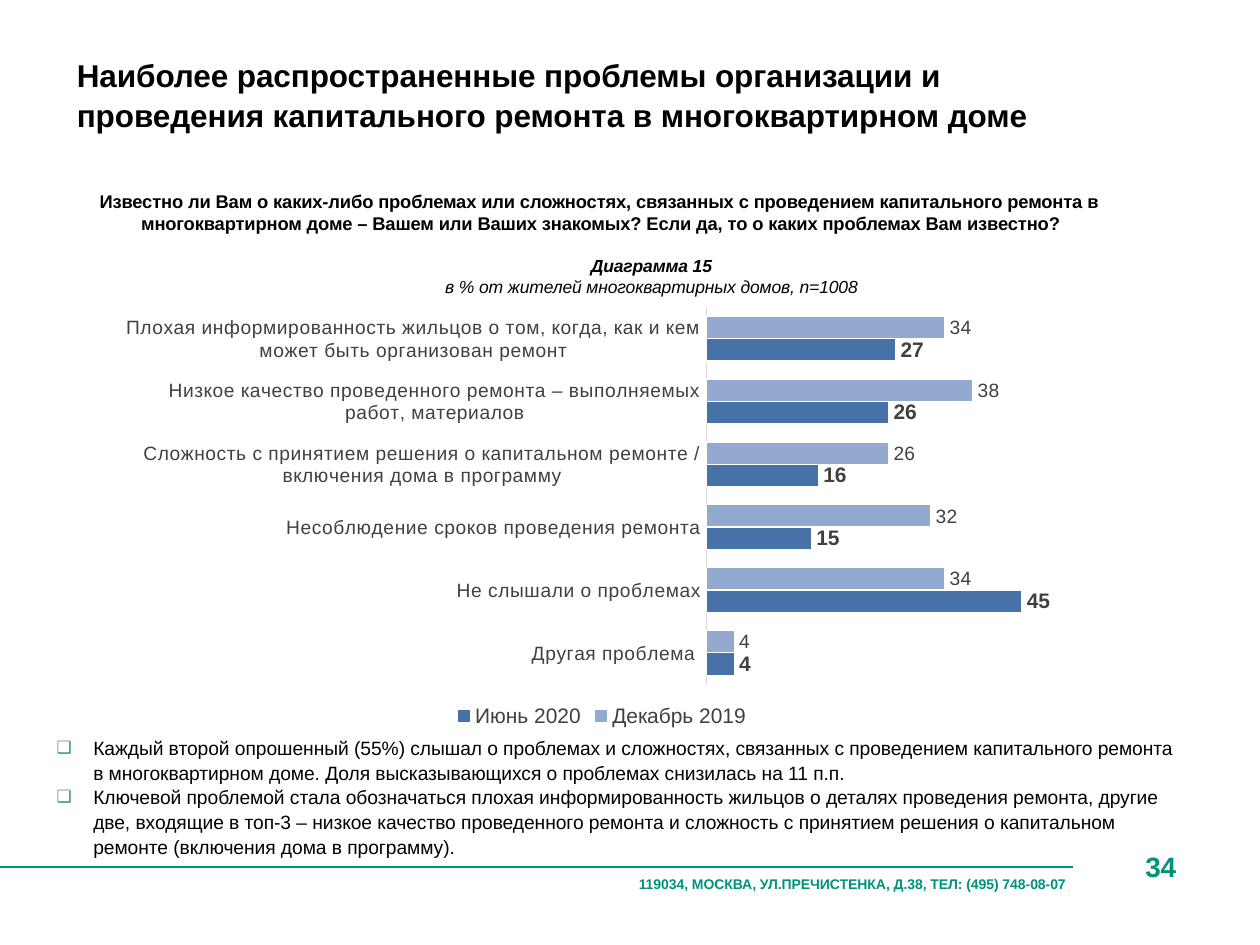
from lxml import etree
from pptx import Presentation
from pptx.chart.data import CategoryChartData
from pptx.dml.color import RGBColor
from pptx.enum.chart import (XL_CHART_TYPE, XL_LABEL_POSITION as LabelPos,
                             XL_LEGEND_POSITION as LegendPos, XL_TICK_MARK as Tick)
from pptx.enum.shapes import MSO_CONNECTOR
from pptx.enum.text import MSO_ANCHOR, MSO_AUTO_SIZE, PP_ALIGN
from pptx.oxml import parse_xml
from pptx.oxml.ns import nsdecls, qn
from pptx.util import Inches, Pt

BLACK = RGBColor(0x00, 0x00, 0x00)
GREY = RGBColor(0x40, 0x40, 0x40)
AXIS_GREY = RGBColor(0xD9, 0xD9, 0xD9)
WHITE = RGBColor(0xFF, 0xFF, 0xFF)
GREEN = RGBColor(0x00, 0x92, 0x7A)
RULE_GREEN = RGBColor(0x00, 0x90, 0x7C)
LIGHT_BLUE = RGBColor(0x93, 0xA9, 0xCF)
BLUE = RGBColor(0x46, 0x72, 0xA8)

TITLE = ("Наиболее распространенные проблемы организации и проведения "
         "капитального ремонта в многоквартирном доме")
QUESTION = ("Известно ли Вам о каких-либо проблемах или сложностях, связанных с "
            "проведением капитального ремонта в многоквартирном доме – Вашем или "
            "Ваших знакомых? Если да, то о каких проблемах Вам известно?")
FINDINGS = [
    "Каждый второй опрошенный (55%) слышал о проблемах и сложностях, связанных с "
    "проведением капитального ремонта в многоквартирном доме. Доля высказывающихся "
    "о проблемах снизилась на 11 п.п.",
    "Ключевой проблемой стала обозначаться плохая информированность жильцов о деталях "
    "проведения ремонта, другие две, входящие в топ-3 – низкое качество проведенного "
    "ремонта и сложность с принятием решения о капитальном ремонте (включения дома в "
    "программу).",
]
PROBLEMS = [
    "Плохая информированность жильцов о том, когда, как и кем может быть организован ремонт",
    "Низкое качество проведенного ремонта – выполняемых работ, материалов",
    "Сложность с принятием решения о капитальном ремонте / включения дома в программу",
    "Несоблюдение сроков проведения ремонта",
    "Не слышали о проблемах",
    "Другая проблема ",
]
# name, values, bar colour, label size, label bold
WAVES = [
    ("Декабрь 2019", (34, 38, 26, 32, 34, 4), LIGHT_BLUE, 11, False),
    ("Июнь 2020", (27, 26, 16, 15, 45, 4), BLUE, 12, True),
]


def set_font(font, size, color, bold=False, italic=False):
    font.name = "Arial"
    font.size = Pt(size)
    font.color.rgb = color
    font.bold = bold
    font.italic = italic


def place(shape, left, top, width, height):
    shape.left, shape.top = Inches(left), Inches(top)
    shape.width, shape.height = Inches(width), Inches(height)
    frame = shape.text_frame
    frame.margin_left = frame.margin_right = 0
    frame.margin_top = frame.margin_bottom = 0
    frame.word_wrap = True
    frame.auto_size = MSO_AUTO_SIZE.NONE
    frame.vertical_anchor = MSO_ANCHOR.TOP
    return frame


def write(paragraph, text, size, color=BLACK, bold=False, italic=False,
          align=PP_ALIGN.LEFT, indent=(0, 0), spacing=None):
    """Fill one paragraph with slightly tightened text."""
    run = paragraph.add_run()
    run.text = text
    run._r.get_or_add_rPr().set("spc", "-5")
    left, first = indent
    props = paragraph._p.get_or_add_pPr()
    props.set("marL", str(Inches(left)))
    props.set("indent", str(Inches(first)))
    paragraph.alignment = align
    paragraph.space_before = Pt(0)
    if spacing:
        paragraph.line_spacing = spacing
    set_font(paragraph.font, size, color, bold, italic)


def add_label(slide, box, text, size, **style):
    frame = place(slide.shapes.add_textbox(0, 0, 0, 0), *box)
    write(frame.paragraphs[0], text, size, **style)
    return frame


def add_bullet(paragraph):
    props = paragraph._p.get_or_add_pPr()
    for xml in ('<a:buClr %s><a:srgbClr val="339966"/></a:buClr>',
                '<a:buSzPct %s val="88000"/>',
                '<a:buFont %s typeface="Arial"/>',
                '<a:buChar %s char="❑"/>'):
        props.append(parse_xml(xml % nsdecls("a")))


def add_findings(body):
    frame = place(body, 0.44, 5.83, 8.99, 0.95)
    for number, finding in enumerate(FINDINGS):
        paragraph = frame.add_paragraph() if number else frame.paragraphs[0]
        add_bullet(paragraph)
        write(paragraph, finding, 11, indent=(0.3, -0.29), spacing=1.07)


def add_question(slide):
    frame = add_label(slide, (0.78, 1.51, 8.78, 1.06), QUESTION, 10.5,
                      bold=True, indent=(0.34, -0.33))
    caption = frame.add_paragraph()
    write(caption, "Диаграмма 15", 10, bold=True, italic=True, align=PP_ALIGN.CENTER)
    caption.space_before = Pt(12)
    write(frame.add_paragraph(), "в % от жителей многоквартирных домов, n=1008", 10,
          italic=True, align=PP_ALIGN.CENTER)


def set_plot_layout(chart, **fractions):
    area = chart._chartSpace.chart.plotArea
    for old in area.findall(qn("c:layout")):
        area.remove(old)
    layout = parse_xml("<c:layout %s><c:manualLayout/></c:layout>" % nsdecls("c"))
    settings = [("layoutTarget", "inner"), ("xMode", "edge"), ("yMode", "edge")]
    for tag, value in settings + list(fractions.items()):
        etree.SubElement(layout[0], qn("c:" + tag)).set("val", str(value))
    area.insert(0, layout)


def add_problem_chart(slide):
    data = CategoryChartData(number_format="0")
    data.categories = PROBLEMS
    for name, values, *_ in WAVES:
        data.add_series(name, values)
    chart = slide.shapes.add_chart(
        XL_CHART_TYPE.BAR_CLUSTERED, Inches(1), Inches(2.37), Inches(7.54),
        Inches(3.44), data).chart
    set_font(chart.font, 10, BLACK)
    chart.has_title = False
    set_plot_layout(chart, x=0.61, y=0.02, w=0.37, h=0.87)

    # Axes
    problems = chart.category_axis
    problems.reverse_order = True
    problems.major_tick_mark = problems.minor_tick_mark = Tick.NONE
    problems.format.line.color.rgb = AXIS_GREY
    problems.format.line.width = Pt(0.75)
    set_font(problems.tick_labels.font, 11, GREY)
    problems._element.find(".//" + qn("a:defRPr")).set("spc", "20")
    percent = chart.value_axis
    percent.visible = percent.has_major_gridlines = False
    percent.minimum_scale, percent.maximum_scale = 0, 50

    # Legend
    chart.has_legend = True
    chart.legend.position = LegendPos.BOTTOM
    chart.legend.include_in_layout = False
    set_font(chart.legend.font, 12, GREY)

    # Bars
    plot = chart.plots[0]
    plot.gap_width, plot.overlap = 80, 0
    plot.vary_by_categories = False
    for bars, (_, _, color, size, bold) in zip(plot.series, WAVES):
        bars.format.fill.solid()
        bars.format.fill.fore_color.rgb = color
        bars.format.line.color.rgb = WHITE
        bars.format.line.width = Pt(0.75)
        labels = bars.data_labels
        labels.show_value = True
        labels.position = LabelPos.OUTSIDE_END
        labels.number_format, labels.number_format_is_linked = "0", False
        set_font(labels.font, size, GREY, bold)


def add_footer(slide):
    rule = slide.shapes.add_connector(MSO_CONNECTOR.STRAIGHT, 0, Inches(6.88),
                                      Inches(8.52), Inches(6.88))
    rule.line.color.rgb = RULE_GREEN
    rule.line.width = Pt(1.2)
    etree.SubElement(rule._element.spPr, qn("a:effectLst"))
    add_label(slide, (9.05, 6.75, 0.33, 0.28), "34", 16, color=GREEN, bold=True,
              indent=(0.04, 0), spacing=Pt(18.6))
    add_label(slide, (5.06, 6.95, 3.48, 0.15),
              "119034, МОСКВА, УЛ.ПРЕЧИСТЕНКА, Д.38, ТЕЛ: (495) 748-08-07", 8,
              color=GREEN, bold=True, indent=(0.01, 0))


def main():
    prs = Presentation()
    prs.slide_width, prs.slide_height = Inches(10), Inches(7.5)
    slide = prs.slides.add_slide(prs.slide_layouts[1])
    heading = place(slide.shapes.title, 0.6, 0.43, 7.65, 0.62)
    write(heading.paragraphs[0], TITLE, 18, bold=True, indent=(0.01, 0), spacing=1.05)
    add_question(slide)
    add_problem_chart(slide)
    add_findings(slide.placeholders[1])
    add_footer(slide)
    prs.save("out.pptx")


if __name__ == "__main__":
    main()
